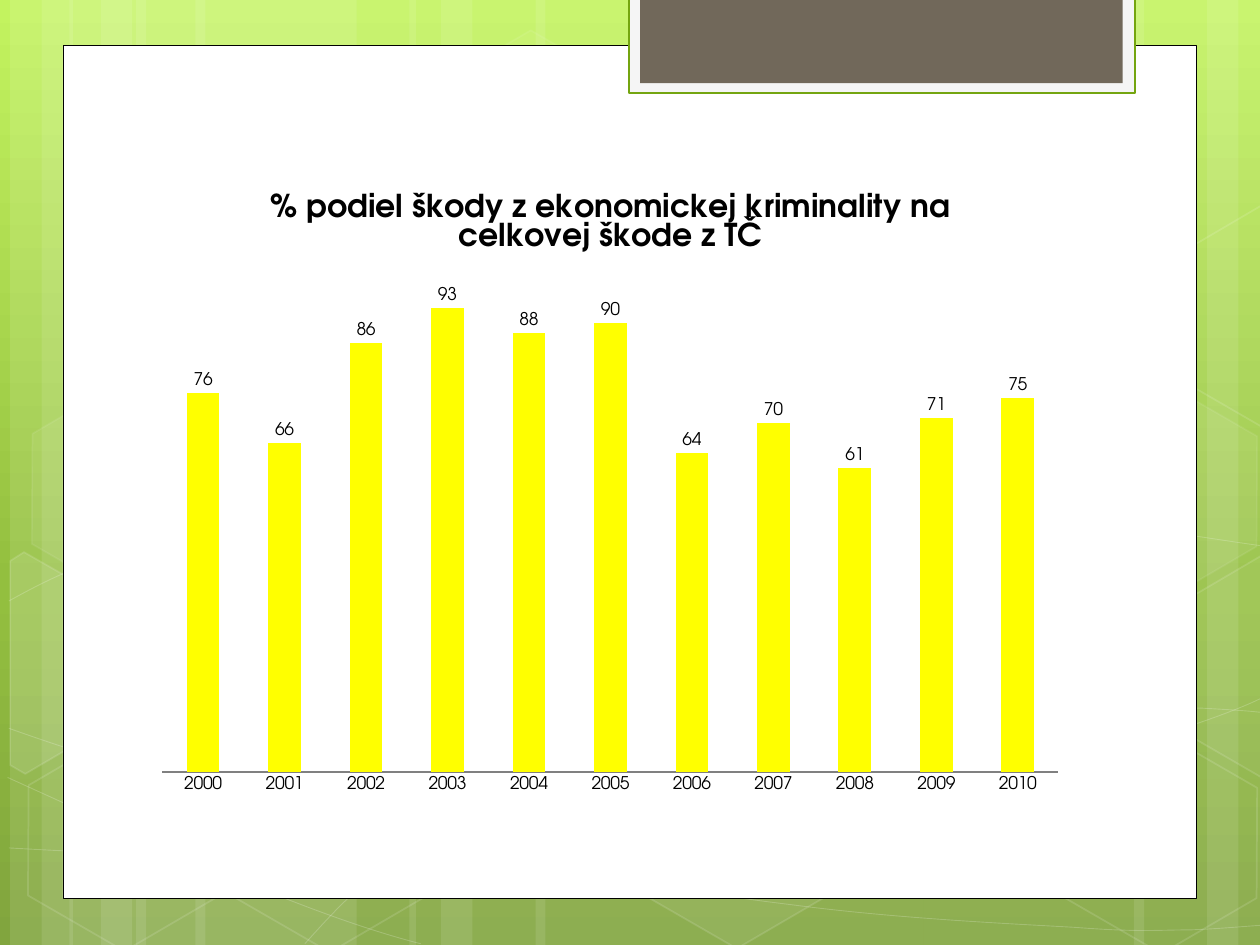
import math

import pptx
import pptx.chart.data
import pptx.dml.color
import pptx.enum.chart
import pptx.enum.shapes
import pptx.oxml
import pptx.oxml.ns
import pptx.util

COLUMNS, ROWS = 10, 7.5
TILT = 30
FONT = "TeX Gyre Adventor"
COLORS = {
    "sky": "C3F35F", "leaf": "93BF3F", "moss": "81A53E", "white": "FFFFFF", "black": "000000",
    "frame": "F5F5F5", "green": "74A510", "tab": "71685A", "bar": "FFFF00", "axis": "808080",
}
STRIPS = [
    (1.08, 1.75), (0.08, 0.5), (0.33, 0.83), (1.55, 1.75), (0.55, 0.5), (0.8, 0.83),
    (7.33, 1.75), (9.58, 0.5), (9, 0.83), (4.25, 3.08), (3.25, 0.5), (3.5, 0.83),
]
CURVES = [
    [(0.07, 6.73), (0.61, 6.76), (1.15, 6.79), (1.9, 6.78), (2.65, 6.77), (3.58, 6.75), (4.58, 6.65),
     (5.58, 6.55), (7, 6.36), (7.92, 6.17), (8.83, 5.98), (9.77, 5.68), (10.07, 5.51)],
    [(0.07, 4.77), (0.36, 4.61), (0.65, 4.46), (1.21, 4.31), (1.78, 4.16), (2.59, 3.94), (3.47, 3.87),
     (4.36, 3.8), (5.44, 3.79), (6.54, 3.87), (7.64, 3.95), (9.47, 4.26), (10.07, 4.34)],
    [(0.06, 6.17), (1.27, 6.72), (2.47, 7.27), (3.34, 7.49)],
    [(0.07, 5.78), (0.38, 5.89), (0.7, 6), (1.28, 6.16), (1.86, 6.31), (2.73, 6.56), (3.57, 6.73),
     (4.4, 6.9), (5.45, 7.08), (6.28, 7.18), (7.11, 7.29), (8, 7.33), (8.53, 7.36),
     (9.05, 7.4), (9.19, 7.38), (9.45, 7.38), (9.71, 7.37), (9.89, 7.35), (10.07, 7.34)],
    [(2.42, 7.49), (2.6, 7.29), (2.78, 7.09), (3.02, 6.91), (3.26, 6.73), (3.6, 6.53), (3.88, 6.39),
     (4.16, 6.25), (4.33, 6.19), (4.7, 6.09), (5.06, 5.99), (5.73, 5.85), (6.08, 5.78),
     (6.44, 5.71), (6.49, 5.71), (6.8, 5.69), (7.11, 5.66), (7.6, 5.63), (7.94, 5.62),
     (8.29, 5.61), (8.86, 5.62), (8.86, 5.62), (9.08, 5.62), (9.31, 5.62), (9.53, 5.62),
     (9.71, 5.63), (9.88, 5.64), (9.97, 5.65), (10.06, 5.66), (10.03, 5.65), (10.06, 5.66)],
]
HEXAGONS = [
    (3.34, 0.36, 4, 8), (4.97, 5.89, 6, 12), (0.11, 5.91, 0, 12), (0.14, 3.12, 7, 8),
    (1.74, 5.92, 0, 12), (7.53, 4.53, 10, 12), (8.34, 5.93, 0, 12), (8.34, 3.14, 7, 8),
]
CUT_HEXAGONS = [
    ((0.36, 5.35), [(0.08, 4.45), (0.19, 4.38), (0.96, 4.82), (0.95, 5.7), (0.2, 6.14), (0.08, 6.07)], 10),
    ((9.85, 5.2), [(9.26, 4.85), (10.01, 4.41), (10.09, 4.46), (10.09, 6.13), (10.02, 6.17), (9.26, 5.73)], 4),
    ((9.85, 2.41), [(9.26, 2.07), (10.01, 1.63), (10.1, 1.68), (10.09, 3.35), (10.02, 3.39), (9.26, 2.95)], 0),
]
DAMAGE_SHARE = [76, 66, 86, 93, 88, 90, 64, 70, 61, 71, 75]


def rgb(name):
    return pptx.dml.color.RGBColor.from_string(COLORS[name])


def untilt(point, center):
    cosine, sine = math.cos(math.radians(TILT)), math.sin(math.radians(TILT))
    x, y = point[0] - center[0], point[1] - center[1]
    return center[0] + x * cosine + y * sine, center[1] - x * sine + y * cosine


class SlideBuilder:
    """Holds the slide and its grid, and draws each kind of element on it."""

    def __init__(self, presentation):
        self.slide = presentation.slides.add_slide(presentation.slide_layouts[6])
        self.column = presentation.slide_width / COLUMNS
        self.row = presentation.slide_height / ROWS

    def place(self, left, top, width, height):
        return (round(left * self.column), round(top * self.row),
                round(width * self.column), round(height * self.row))

    def background(self, stops):
        fill = self.slide.background.fill
        fill.gradient()
        fill.gradient_angle = 270
        stop_list = self.slide.element.find(".//" + pptx.oxml.ns.qn("a:gsLst"))
        for stop in list(stop_list):
            stop_list.remove(stop)
        for position, name in stops:
            stop_list.append(pptx.oxml.parse_xml(
                f'<a:gs {pptx.oxml.ns.nsdecls("a")} pos="{position * 1000}">'
                f'<a:srgbClr val="{COLORS[name]}"/></a:gs>'))

    def style(self, shape, fill=None, opacity=100, line=None, line_width=1, line_opacity=100):
        shape.shadow.inherit = False
        for paint, name, alpha in ((shape.fill, fill, opacity), (shape.line.fill, line, line_opacity)):
            if name is None or alpha == 0:
                paint.background()
                continue
            paint.solid()
            paint.fore_color.rgb = rgb(name)
            properties = shape.element.spPr
            parent = properties if paint is shape.fill else properties.find(pptx.oxml.ns.qn("a:ln"))
            if alpha < 100:
                color = parent.find(pptx.oxml.ns.qn("a:solidFill"))[0]
                color.append(pptx.oxml.parse_xml(
                    f'<a:alpha {pptx.oxml.ns.nsdecls("a")} val="{alpha * 1000}"/>'))
        if line:
            shape.line.width = pptx.util.Pt(line_width)

    def rectangle(self, left, top, width, height, **style):
        shape = self.slide.shapes.add_shape(
            pptx.enum.shapes.MSO_SHAPE.RECTANGLE, *self.place(left, top, width, height))
        self.style(shape, **style)

    def hexagon(self, left, top, **style):
        shape = self.slide.shapes.add_shape(
            pptx.enum.shapes.MSO_SHAPE.HEXAGON, *self.place(left, top, 1.75, 1.52))
        shape.rotation = TILT
        shape.adjustments[0] = 0.285
        self.style(shape, **style)

    def outline(self, points, close, **style):
        corners = [(round(x * self.column), round(y * self.row)) for x, y in points]
        builder = self.slide.shapes.build_freeform(*corners[0])
        builder.add_line_segments(corners[1:], close=close)
        shape = builder.convert_to_shape()
        self.style(shape, **style)
        return shape

    def curve(self, points, **style):
        shape = self.outline(points, False, **style)
        lines = shape.element.findall(".//" + pptx.oxml.ns.qn("a:lnTo"))
        outline = lines[0].getparent()
        for start in range(0, len(lines), 3):
            bezier = pptx.oxml.parse_xml(f'<a:cubicBezTo {pptx.oxml.ns.nsdecls("a")}/>')
            outline.append(bezier)
            for line in lines[start:start + 3]:
                bezier.append(line[0])
                outline.remove(line)

    def cut_hexagon(self, center, points, **style):
        shape = self.outline([untilt(point, center) for point in points], True, **style)
        shape.rotation = TILT

    def column_chart(self, left, top, width, height, title, categories, values):
        data = pptx.chart.data.CategoryChartData(number_format="0")
        data.categories = categories
        data.add_series("Series 1", values)
        chart = self.slide.shapes.add_chart(
            pptx.enum.chart.XL_CHART_TYPE.COLUMN_CLUSTERED,
            *self.place(left, top, width, height), data).chart
        chart.has_legend = False
        chart.font.name, chart.font.size = FONT, pptx.util.Pt(10)
        chart.font.color.rgb = rgb("black")

        chart.chart_title.text_frame.text = title
        chart.chart_title.include_in_layout = False
        font = chart.chart_title.text_frame.paragraphs[0].font
        font.name, font.size, font.bold = FONT, pptx.util.Pt(18), True
        font.color.rgb = rgb("black")

        category_axis, value_axis = chart.category_axis, chart.value_axis
        category_axis.major_tick_mark = pptx.enum.chart.XL_TICK_MARK.NONE
        category_axis.format.line.color.rgb = rgb("axis")
        category_axis.format.line.width = pptx.util.Pt(1)
        value_axis.minimum_scale, value_axis.maximum_scale = 0, 100
        value_axis.has_major_gridlines = False
        value_axis.visible = False

        plot = chart.plots[0]
        plot.gap_width = 150
        plot.vary_by_categories = False
        plot.has_data_labels = True
        plot.data_labels.show_value = True
        plot.data_labels.position = pptx.enum.chart.XL_LABEL_POSITION.OUTSIDE_END
        bars = plot.series[0].format.fill
        bars.solid()
        bars.fore_color.rgb = rgb("bar")

        area = chart.element.chart.plotArea
        for layout in area.findall(pptx.oxml.ns.qn("c:layout")):
            area.remove(layout)
        area.insert(0, pptx.oxml.parse_xml(
            f'<c:layout {pptx.oxml.ns.nsdecls("c")}><c:manualLayout><c:layoutTarget val="inner"/>'
            '<c:xMode val="edge"/><c:yMode val="edge"/><c:x val="0.02"/><c:y val="0.17"/>'
            '<c:w val="0.96"/><c:h val="0.78"/></c:manualLayout></c:layout>'))


def main():
    presentation = pptx.Presentation()
    presentation.slide_width = pptx.util.Inches(10)
    presentation.slide_height = pptx.util.Inches(7.5)
    builder = SlideBuilder(presentation)
    builder.background([(0, "sky"), (62, "leaf"), (100, "moss")])
    for left, width in STRIPS:
        builder.rectangle(left, 0, width, ROWS, fill="white", opacity=10)
    for points in CURVES:
        builder.curve(points, line="white", line_width=0.5, line_opacity=20)
    for left, top, opacity, line_opacity in HEXAGONS:
        builder.hexagon(left, top, fill="white", opacity=opacity, line="white", line_opacity=line_opacity)
    for center, points, opacity in CUT_HEXAGONS:
        builder.cut_hexagon(center, points, fill="white", opacity=opacity, line="white", line_opacity=12)
    builder.rectangle(0.5, 0.36, 9, 6.77, fill="white", line="black", line_width=0.5)
    builder.rectangle(4.99, -0.02, 4.02, 0.76, fill="frame", line="green", line_width=1.25)
    builder.rectangle(5.08, -0.02, 3.83, 0.68, fill="tab")
    builder.column_chart(1.14, 1.31, 7.41, 5.07,
                         "% podiel škody z ekonomickej kriminality na celkovej škode z TČ",
                         [str(year) for year in range(2000, 2011)], DAMAGE_SHARE)
    presentation.save("out.pptx")


if __name__ == "__main__":
    main()
